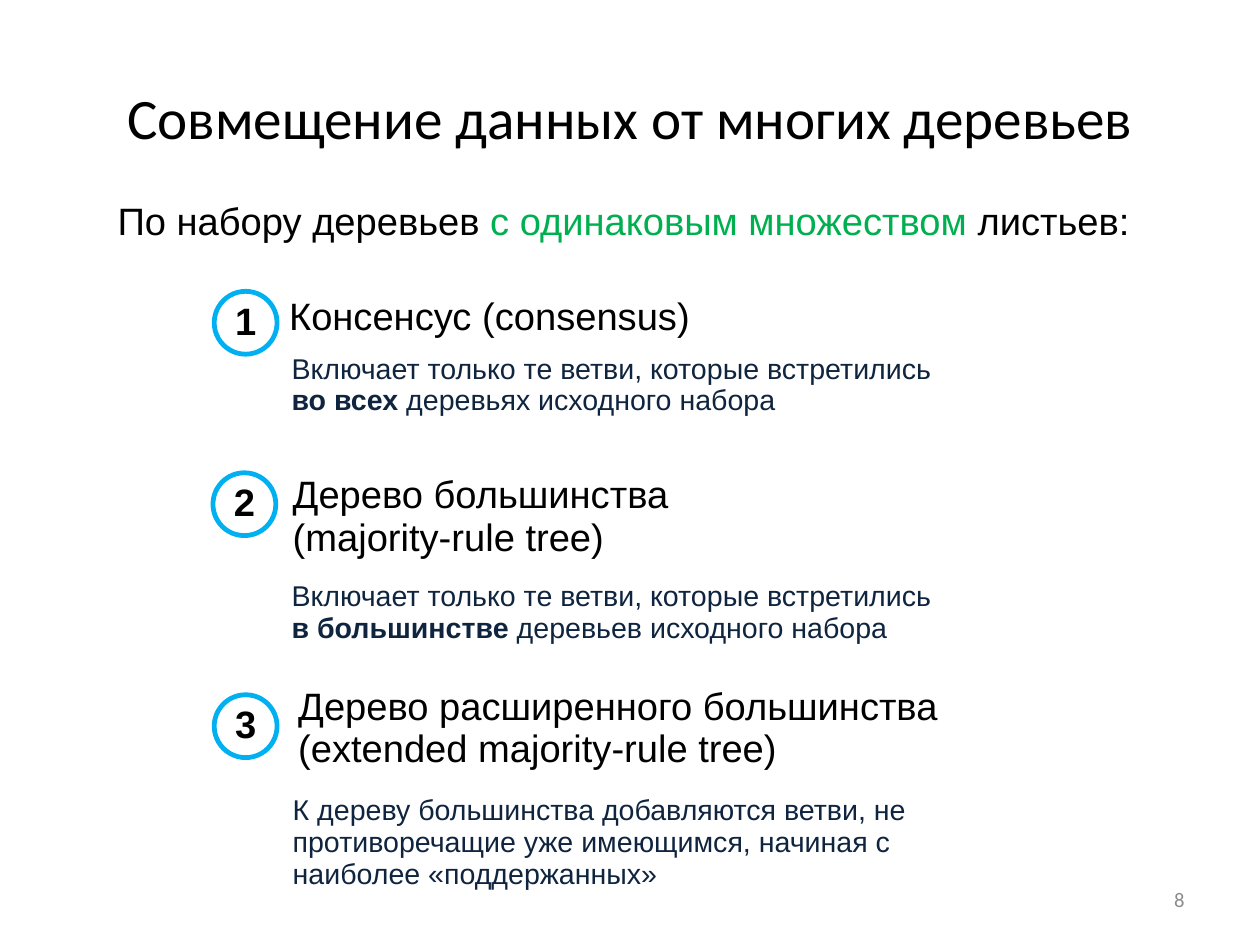
from dataclasses import dataclass

from pptx import Presentation, util as u
from pptx.dml.color import RGBColor
from pptx.enum import shapes, text


@dataclass(frozen=True)
class Theme:
    wide: int = u.Cm(28)
    high: int = u.Cm(21)
    sans: str = "Arial"
    head: str = "Calibri"
    black: str = "000000"
    white: str = "FFFFFF"
    navy: str = "0F243E"
    green: str = "00B050"
    blue: str = "00B0F0"
    gray: str = "8C8C8C"
    title: int = 36
    large: int = 24
    body: int = 18
    small: int = 13
    line: int = 3
    lead: float = 0.93


T = Theme()
RING = 4.99, 6.65


def place(x, y, w, h):
    return (round(x * T.wide / 100), round(y * T.high / 100),
            round(w * T.wide / 100), round(h * T.high / 100))


def style(font, size, color, name=T.sans, bold=False):
    font.size, font.name, font.bold = u.Pt(size), name, bold
    font.color.rgb = RGBColor.from_string(color)


def add_title(slide, words, box):
    title = slide.shapes.title
    title.left, title.top, title.width, title.height = place(*box)
    frame = title.text_frame
    frame.text = words
    frame.auto_size = text.MSO_AUTO_SIZE.NONE
    frame.vertical_anchor = text.MSO_ANCHOR.MIDDLE
    para = frame.paragraphs[0]
    para.alignment = text.PP_ALIGN.CENTER
    style(para.font, T.title, T.black, T.head)


def add_text(slide, parts, box, size, color):
    frame = slide.shapes.add_textbox(*place(*box)).text_frame
    frame.word_wrap = True
    para = frame.paragraphs[0]
    para.line_spacing = T.lead
    style(para.font, size, color)
    for words, tint, bold in parts:
        run = para.add_run()
        run.text = words
        if tint:
            run.font.color.rgb = RGBColor.from_string(tint)
        if bold:
            run.font.bold = True


def add_ring(slide, mark, x, y):
    ring = slide.shapes.add_shape(shapes.MSO_SHAPE.OVAL, *place(x, y, *RING))
    ring.shadow.inherit = False
    ring.fill.solid()
    ring.fill.fore_color.rgb = RGBColor.from_string(T.white)
    ring.line.color.rgb = RGBColor.from_string(T.blue)
    ring.line.width = u.Pt(T.line)
    frame = ring.text_frame
    frame.text = mark
    frame.word_wrap = False
    frame.vertical_anchor = text.MSO_ANCHOR.MIDDLE
    para = frame.paragraphs[0]
    para.alignment = text.PP_ALIGN.CENTER
    para.line_spacing = T.lead
    style(para.font, T.large, T.black, bold=True)


def add_number(slide, mark, box):
    frame = slide.shapes.add_textbox(*place(*box)).text_frame
    frame.text = mark
    frame.word_wrap = True
    frame.vertical_anchor = text.MSO_ANCHOR.MIDDLE
    frame.margin_left = frame.margin_right = u.Inches(0.11)
    para = frame.paragraphs[0]
    para.alignment = text.PP_ALIGN.RIGHT
    style(para.font, T.small, T.gray, T.head)


def main():
    deck = Presentation()
    deck.slide_width, deck.slide_height = T.wide, T.high
    slide = deck.slides.add_slide(deck.slide_layouts[5])

    add_title(slide, "Совмещение данных от многих деревьев", (5, 4, 90, 16.7))
    add_text(slide, [("По набору деревьев ", None, False),
                     ("с одинаковым множеством ", T.green, False),
                     ("листьев:", None, False)],
             (8.44, 20.75, 86.2, 5.8), T.large, T.black)

    only = "Включает только те ветви, которые встретились "
    items = [
        ((17, 30.83), "Консенсус (consensus)", (22.05, 30.75, 42.56, 6.05),
         [(only, None, False), ("во всех ", None, True),
          ("деревьях исходного набора", None, False)],
         (22.25, 36.82, 53.45, 7.98)),
        ((16.9, 50.03), "Дерево большинства (majority-rule tree)",
         (22.34, 49.65, 42.56, 11),
         [(only, None, False), ("в большинстве ", None, True),
          ("деревьев исходного набора", None, False)],
         (22.25, 60.9, 52.72, 7.98)),
        ((17, 73.52),
         "Дерево расширенного большинства (extended majority-rule tree)",
         (22.78, 72.03, 53.27, 11),
         [("К дереву большинства добавляются ветви, не противоречащие уже "
           "имеющимся, начиная с наиболее «поддержанных»", None, False)],
         (22.34, 83.5, 54.08, 11.49)),
    ]
    for rank, (spot, name, top, parts, low) in enumerate(items, 1):
        add_ring(slide, str(rank), *spot)
        add_text(slide, [(name, None, False)], top, T.large, T.black)
        add_text(slide, parts, low, T.body, T.navy)

    add_number(slide, "8", (71.69, 92.5, 23.32, 5.32))
    deck.save("out.pptx")


if __name__ == "__main__":
    main()
